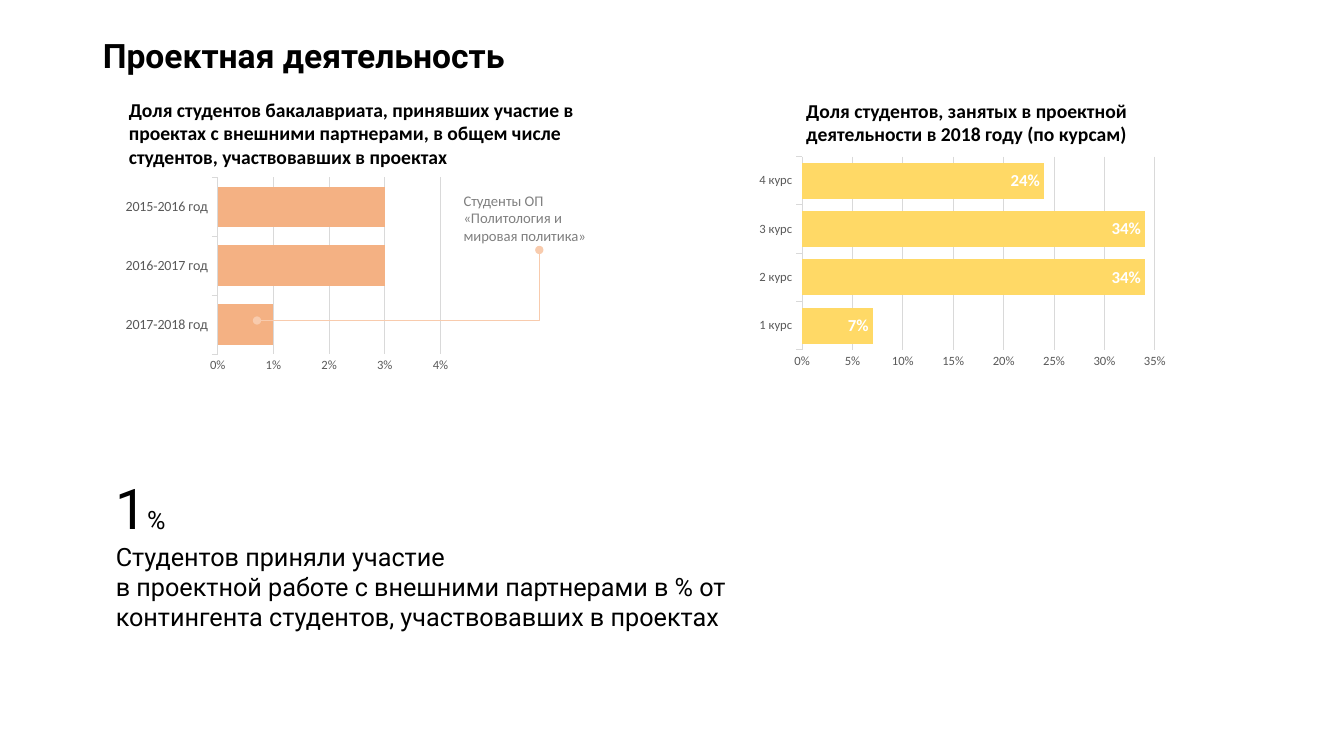
"""Build the slide on student project work: two bar charts, a callout and a key figure."""
import pptx
import pptx.chart.data
import pptx.dml.color
import pptx.enum.chart
import pptx.enum.shapes
import pptx.enum.text
import pptx.oxml
import pptx.oxml.ns
import pptx.util

COLORS = {
    "text": "000000", "axis": "595959", "grid": "D9D9D9", "note": "808080",
    "partners": "F4B183", "courses": "FFD966", "callout": "F8CBAD", "label": "FFFFFF",
}

deck = pptx.Presentation()
deck.slide_width = pptx.util.Inches(13.33)
deck.slide_height = pptx.util.Inches(7.5)
COL, ROW = deck.slide_width / 40, deck.slide_height / 30
slide = deck.slides.add_slide(deck.slide_layouts[5])


def place(left, top, width, height):
    """Turn grid columns and rows into slide lengths."""
    return int(left * COL), int(top * ROW), int(width * COL), int(height * ROW)


def style(font, size, color, name="Calibri", bold=False):
    """Set the size, colour, typeface and weight of a font."""
    font.size, font.name, font.bold = pptx.util.Pt(size), name, bold
    font.color.rgb = pptx.dml.color.RGBColor.from_string(COLORS[color])


title = slide.shapes.title
title.left, title.top, title.width, title.height = place(2.76, 1.36, 15.3, 2.16)
title.text_frame.vertical_anchor = pptx.enum.text.MSO_ANCHOR.TOP
title.text_frame.auto_size = pptx.enum.text.MSO_AUTO_SIZE.NONE
heading = title.text_frame.paragraphs[0]
heading.alignment = pptx.enum.text.PP_ALIGN.LEFT
heading.line_spacing = 0.9
heading_run = heading.add_run()
heading_run.text = "Проектная деятельность"
style(heading_run.font, 24, "text", "Roboto", True)

charts = [
    {"area": (3.54, 6.88, 10, 8.08), "gap": 45, "color": "partners", "category_size": 10,
     "max": 0.04, "step": 0.01, "labels": False,
     "shares": {"2017-2018 год": 0.01, "2016-2017 год": 0.03, "2015-2016 год": 0.03}},
    {"area": (22.35, 6.04, 12.6, 8.76), "gap": 35, "color": "courses", "category_size": 9,
     "max": 0.35, "step": 0.05, "labels": True,
     "shares": {"1 курс": 0.07, "2 курс": 0.34, "3 курс": 0.34, "4 курс": 0.24}},
]
for setup in charts:
    shares = pptx.chart.data.CategoryChartData(number_format="0%")
    shares.categories = list(setup["shares"])
    shares.add_series("Доля студентов", list(setup["shares"].values()))
    chart = slide.shapes.add_chart(
        pptx.enum.chart.XL_CHART_TYPE.BAR_CLUSTERED, *place(*setup["area"]), shares).chart
    chart.has_legend = False
    chart.has_title = False
    style(chart.font, 10, "text")

    years = chart.category_axis
    years.major_tick_mark = pptx.enum.chart.XL_TICK_MARK.OUTSIDE
    style(years.tick_labels.font, setup["category_size"], "axis")

    percent = chart.value_axis
    percent.minimum_scale, percent.maximum_scale = 0, setup["max"]
    percent.major_unit = setup["step"]
    percent.major_tick_mark = pptx.enum.chart.XL_TICK_MARK.NONE
    percent.tick_labels.number_format = "0%"
    percent.tick_labels.number_format_is_linked = False
    percent.format.line.fill.background()
    style(percent.tick_labels.font, 9, "axis")

    for line in (years.format.line, percent.major_gridlines.format.line):
        line.color.rgb = pptx.dml.color.RGBColor.from_string(COLORS["grid"])
        line.width = pptx.util.Pt(0.75)

    bars = chart.plots[0]
    bars.gap_width = setup["gap"]
    bars.vary_by_categories = False
    bar_fill = bars.series[0].format.fill
    bar_fill.solid()
    bar_fill.fore_color.rgb = pptx.dml.color.RGBColor.from_string(COLORS[setup["color"]])
    if setup["labels"]:
        labels = bars.series[0].data_labels
        labels.show_value = True
        labels.number_format = "0%"
        labels.number_format_is_linked = False
        labels.position = pptx.enum.chart.XL_LABEL_POSITION.INSIDE_END
        style(labels.font, 12, "label", bold=True)

texts = [
    ((3.54, 3.68, 15.8, 3.24), "text", "Calibri", True, [
        [("Доля студентов бакалавриата, принявших участие в проектах с внешними партнерами, "
          "в общем числе студентов, участвовавших в проектах", 14)]]),
    ((23.7, 3.72, 12.03, 2.28), "text", "Calibri", True, [
        [("Доля студентов, занятых в проектной деятельности в 2018 году (по курсам)", 14)]]),
    ((13.5, 7.4, 5.1, 2.52), "note", "Calibri", False, [
        [("Студенты ОП «Политология и мировая политика»", 10.5)]]),
    ((3.15, 18.6, 20, 6.72), "text", "Roboto", False, [
        [("1", 40), ("%", 18)],
        [("Студентов приняли участие", 18)],
        [("в проектной работе с внешними партнерами в % от контингента студентов, "
          "участвовавших в проектах", 18)]]),
]
for area, color, typeface, bold, paragraphs in texts:
    frame = slide.shapes.add_textbox(*place(*area)).text_frame
    frame.word_wrap = True
    for index, pieces in enumerate(paragraphs):
        paragraph = frame.add_paragraph() if index else frame.paragraphs[0]
        for words, size in pieces:
            run = paragraph.add_run()
            run.text = words
            style(run.font, size, color, typeface, bold)

left, top, width, height = place(10.8, 5.72, 2.1, 11.2)
callout = slide.shapes.add_connector(
    pptx.enum.shapes.MSO_CONNECTOR.ELBOW, left, top, left + width, top + height)
callout.line.color.rgb = pptx.dml.color.RGBColor.from_string(COLORS["callout"])
callout.line.width = pptx.util.Pt(1)
properties = callout._element.spPr
properties.find(pptx.oxml.ns.qn("a:xfrm")).set("rot", str(90 * 60000))
properties.find(pptx.oxml.ns.qn("a:prstGeom")).set("prst", "bentConnector2")
outline = properties.find(pptx.oxml.ns.qn("a:ln"))
for end in ("headEnd", "tailEnd"):
    outline.append(pptx.oxml.parse_xml(f'<a:{end} {pptx.oxml.ns.nsdecls("a")} type="oval"/>'))
properties.append(pptx.oxml.parse_xml(f'<a:effectLst {pptx.oxml.ns.nsdecls("a")}/>'))

deck.save("out.pptx")
